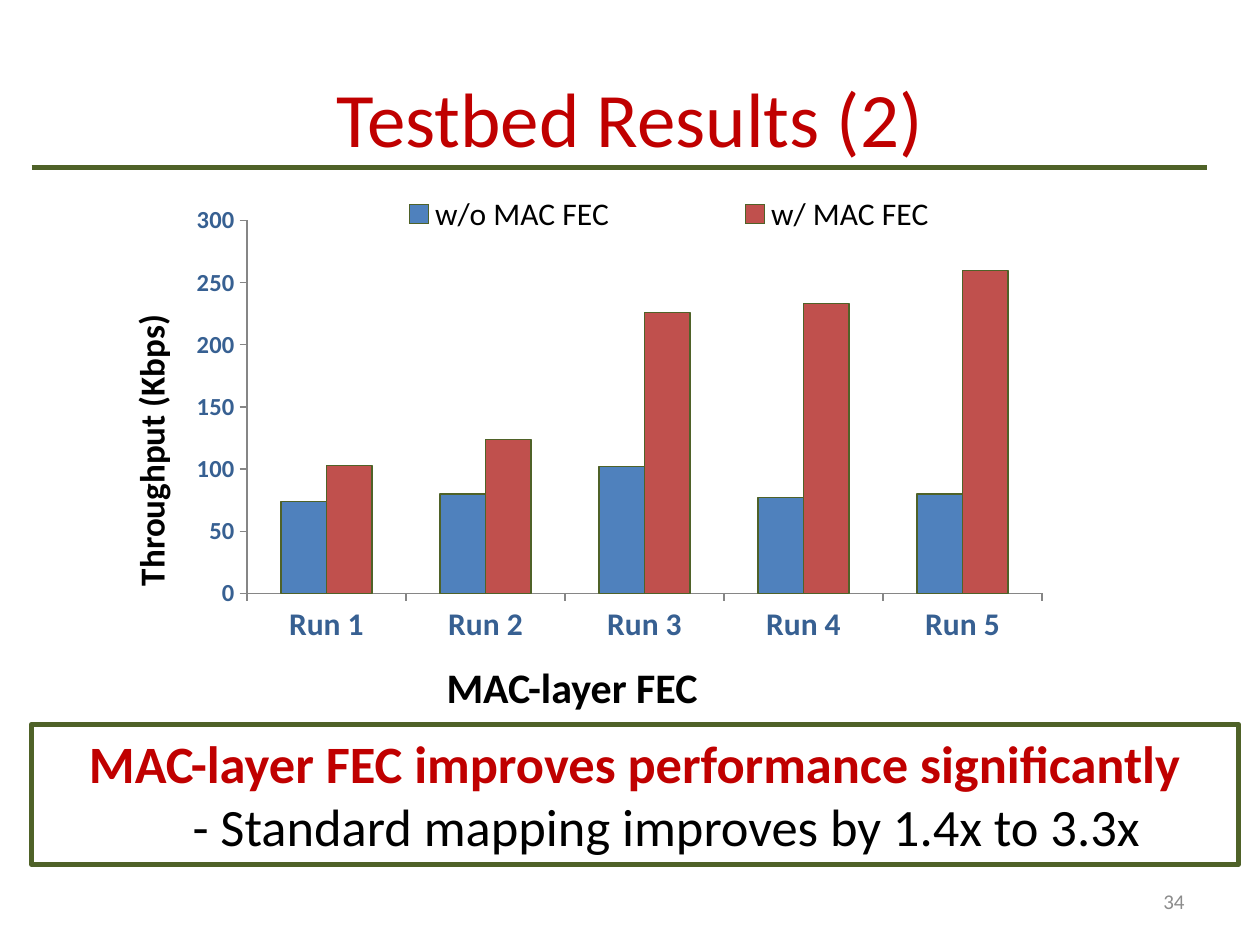
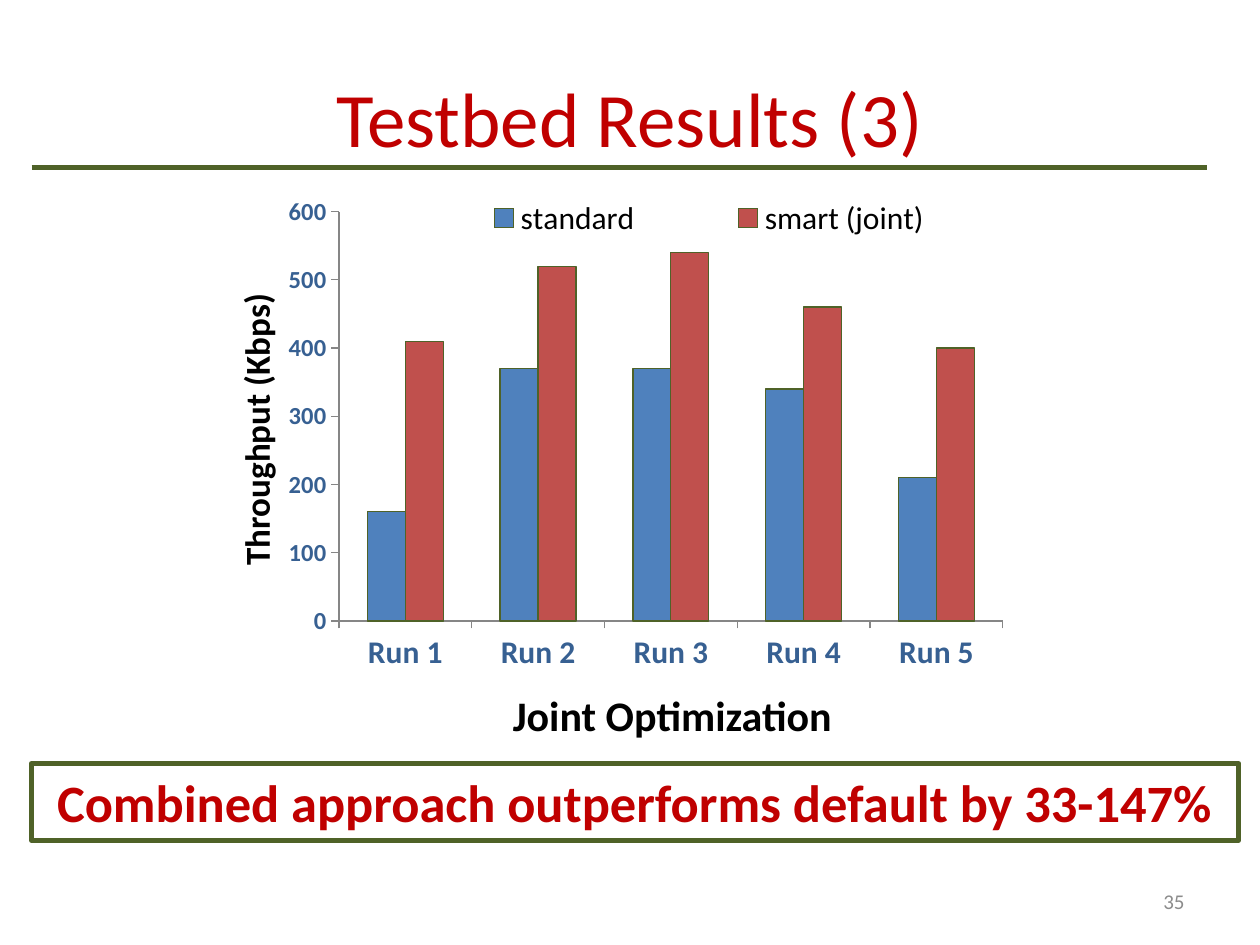
"""Build two testbed result slides, each with a bar chart and a takeaway box."""
from dataclasses import dataclass

from lxml import etree
from pptx import Presentation
from pptx.chart.data import CategoryChartData
from pptx.dml.color import RGBColor
from pptx.enum.chart import XL_CHART_TYPE, XL_LEGEND_POSITION, XL_TICK_MARK
from pptx.enum.shapes import MSO_CONNECTOR, MSO_SHAPE
from pptx.enum.text import MSO_ANCHOR, PP_ALIGN
from pptx.oxml.ns import qn
from pptx.util import Inches, Pt

COLUMN = XL_CHART_TYPE.COLUMN_CLUSTERED
LEGEND_TOP = XL_LEGEND_POSITION.TOP
TICK_OUT, TICK_NONE = XL_TICK_MARK.OUTSIDE, XL_TICK_MARK.NONE
STRAIGHT = MSO_CONNECTOR.STRAIGHT
RECTANGLE = MSO_SHAPE.RECTANGLE
MIDDLE = MSO_ANCHOR.MIDDLE
LEFT, CENTER, RIGHT = PP_ALIGN.LEFT, PP_ALIGN.CENTER, PP_ALIGN.RIGHT

RED = RGBColor(0xC0, 0x00, 0x00)
GREEN = RGBColor(0x4F, 0x62, 0x28)
BLACK = RGBColor(0x00, 0x00, 0x00)
GRAY = RGBColor(0x8C, 0x8C, 0x8C)
AXIS_GRAY = RGBColor(0x86, 0x86, 0x86)
AXIS_BLUE = RGBColor(0x37, 0x60, 0x92)
SERIES_COLORS = (RGBColor(0x4F, 0x81, 0xBD), RGBColor(0xC0, 0x50, 0x4D))

FONT = "Calibri"
RUNS = [f"Run {n}" for n in range(1, 6)]
BAND_LEFT, BAND_WIDTH = 0.25, 9.58
RULE_Y, RULE_END = 1.33, 9.58


@dataclass(frozen=True)
class Box:
    """Left, top, width and height in inches."""
    left: float
    top: float
    width: float
    height: float

    def lengths(self) -> tuple:
        """Return the four values as lengths."""
        return tuple(Inches(v) for v in (self.left, self.top, self.width, self.height))


@dataclass(frozen=True)
class Line:
    """One paragraph of the takeaway box."""
    text: str
    color: RGBColor = RED
    bold: bool = True
    level: int = 0


@dataclass(frozen=True)
class ResultSlide:
    """Content and placement of one result slide."""
    title: str
    number: str
    series: dict
    chart: Box
    plot: Box
    legend: Box
    axis_max: int
    axis_step: int
    axis_label: Box
    caption: str
    caption_box: Box
    caption_align: PP_ALIGN
    takeaway_top: float
    takeaway_height: float
    takeaway: tuple


NUMBER_BOX = Box(7.17, 6.95, 2.33, 0.4)
TITLE_BOX = Box(0.5, 0.3, 9, 1.25)

SLIDES = (
    ResultSlide(
        title="Testbed Results (2)", number="34",
        series={"w/o MAC FEC": (74, 80, 102, 77, 80),
                "w/ MAC FEC": (103, 124, 226, 233, 260)},
        chart=Box(1.42, 1.08, 6.99, 4.12),
        plot=Box(1.96, 1.75, 6.31, 2.96),
        legend=Box(2.25, 1.5, 6.12, 0.4),
        axis_max=300, axis_step=50,
        axis_label=Box(-0.09, 3.24, 2.58, 0.44),
        caption="MAC-layer FEC", caption_box=Box(3.08, 5.2, 2.92, 0.5),
        caption_align=CENTER,
        takeaway_top=5.75, takeaway_height=1.11,
        takeaway=(Line("MAC-layer FEC improves performance significantly"),
                  Line("- Standard mapping improves by 1.4x to 3.3x", BLACK, False, 1)),
    ),
    ResultSlide(
        title="Testbed Results (3)", number="35",
        series={"standard": (160, 370, 370, 340, 210),
                "smart (joint)": (410, 520, 540, 460, 400)},
        chart=Box(2.18, 0.99, 5.91, 4.42),
        plot=Box(2.69, 1.68, 5.27, 3.25),
        legend=Box(3.18, 1.53, 4.9, 0.4),
        axis_max=600, axis_step=100,
        axis_label=Box(0.66, 2.99, 2.75, 0.44),
        caption="Joint Optimization", caption_box=Box(2.25, 5.42, 4.45, 0.5),
        caption_align=RIGHT,
        takeaway_top=6.06, takeaway_height=0.61,
        takeaway=(Line("Combined approach outperforms default by 33-147%"),),
    ),
)


def style_font(font, size: float, color: RGBColor, bold: bool = False) -> None:
    """Set family, size, colour and weight."""
    font.name, font.size, font.bold = FONT, Pt(size), bold
    font.color.rgb = color


def write(p, text: str, size: float, color: RGBColor,
          bold: bool = False, align: PP_ALIGN = CENTER) -> None:
    """Add one styled run to a paragraph."""
    p.alignment = align
    r = p.add_run()
    r.text = text
    style_font(r.font, size, color, bold)


def add_text(s, box: Box, text: str, size: float, color: RGBColor,
             bold: bool, align: PP_ALIGN):
    """Add a one-line text box."""
    sp = s.shapes.add_textbox(*box.lengths())
    sp.text_frame.word_wrap = True
    write(sp.text_frame.paragraphs[0], text, size, color, bold, align)
    return sp


def add_title(s, text: str) -> None:
    """Place the title and the rule below it."""
    sp = s.shapes.title
    sp.left, sp.top, sp.width, sp.height = TITLE_BOX.lengths()
    sp.text_frame.vertical_anchor = MIDDLE
    write(sp.text_frame.paragraphs[0], text, 44, RED)
    rule = s.shapes.add_connector(STRAIGHT, Inches(BAND_LEFT), Inches(RULE_Y),
                                  Inches(RULE_END), Inches(RULE_Y))
    rule.line.color.rgb, rule.line.width = GREEN, Pt(3)
    etree.SubElement(rule._element.spPr, qn("a:effectLst"))


def manual_layout(box: Box, frame: Box, inner: bool = False):
    """Return a chart layout that puts a part at a slide position."""
    layout = etree.Element(qn("c:layout"))
    manual = etree.SubElement(layout, qn("c:manualLayout"))
    values = {
        "xMode": "edge", "yMode": "edge",
        "x": (box.left - frame.left) / frame.width,
        "y": (box.top - frame.top) / frame.height,
        "w": box.width / frame.width,
        "h": box.height / frame.height,
    }
    if inner:
        values = {"layoutTarget": "inner", **values}
    for tag, value in values.items():
        etree.SubElement(manual, qn(f"c:{tag}")).set("val", str(value))
    return layout


def style_axis(axis, size: float) -> None:
    """Give an axis its ticks, line and labels."""
    axis.has_major_gridlines = False
    axis.major_tick_mark, axis.minor_tick_mark = TICK_OUT, TICK_NONE
    axis.format.line.color.rgb = AXIS_GRAY
    axis.format.line.width = Pt(0.75)
    style_font(axis.tick_labels.font, size, AXIS_BLUE, True)


def add_results_chart(s, spec: ResultSlide) -> None:
    """Add the throughput column chart."""
    data = CategoryChartData()
    data.categories = RUNS
    for name, values in spec.series.items():
        data.add_series(name, values)
    chart = s.shapes.add_chart(COLUMN, *spec.chart.lengths(), data).chart
    style_font(chart.font, 18, BLACK)
    chart.has_title = False

    plot = chart.plots[0]
    plot.gap_width, plot.overlap, plot.vary_by_categories = 150, 0, False
    for series, color in zip(plot.series, SERIES_COLORS):
        series.format.fill.solid()
        series.format.fill.fore_color.rgb = color
        series.format.line.color.rgb = GREEN
        series.format.line.width = Pt(0.75)

    style_axis(chart.category_axis, 18)
    style_axis(chart.value_axis, 14)
    chart.value_axis.minimum_scale = 0
    chart.value_axis.maximum_scale = spec.axis_max
    chart.value_axis.major_unit = spec.axis_step

    chart.has_legend = True
    legend = chart.legend
    legend.position, legend.include_in_layout = LEGEND_TOP, False
    style_font(legend.font, 18, BLACK)
    area = plot._element.getparent()
    for part in (area, legend._element):
        for old in part.findall(qn("c:layout")):
            part.remove(old)
    area.insert(0, manual_layout(spec.plot, spec.chart, inner=True))
    legend._element.find(qn("c:legendPos")).addnext(
        manual_layout(spec.legend, spec.chart))


def add_takeaway(s, spec: ResultSlide) -> None:
    """Add the framed conclusion."""
    box = Box(BAND_LEFT, spec.takeaway_top, BAND_WIDTH, spec.takeaway_height)
    sp = s.shapes.add_shape(RECTANGLE, *box.lengths())
    sp.shadow.inherit = False
    sp.fill.background()
    sp.line.color.rgb, sp.line.width = GREEN, Pt(3)
    tf = sp.text_frame
    tf.word_wrap = True
    for i, line in enumerate(spec.takeaway):
        p = tf.add_paragraph() if i else tf.paragraphs[0]
        p.level = line.level
        write(p, line.text, 30, line.color, line.bold)


def build_slide(prs, spec: ResultSlide) -> None:
    """Build one result slide."""
    s = prs.slides.add_slide(prs.slide_layouts[5])
    add_title(s, spec.title)
    add_results_chart(s, spec)
    label = add_text(s, spec.axis_label, "Throughput (Kbps)", 20, BLACK, True, LEFT)
    label.rotation = 270
    add_text(s, spec.caption_box, spec.caption, 24, BLACK, True, spec.caption_align)
    add_takeaway(s, spec)
    number = add_text(s, NUMBER_BOX, spec.number, 12, GRAY, False, RIGHT)
    number.text_frame.vertical_anchor = MIDDLE


def main() -> None:
    """Build and save the presentation."""
    prs = Presentation()
    prs.slide_width, prs.slide_height = Inches(10), Inches(7.5)
    for spec in SLIDES:
        build_slide(prs, spec)
    prs.save("out.pptx")


if __name__ == "__main__":
    main()
